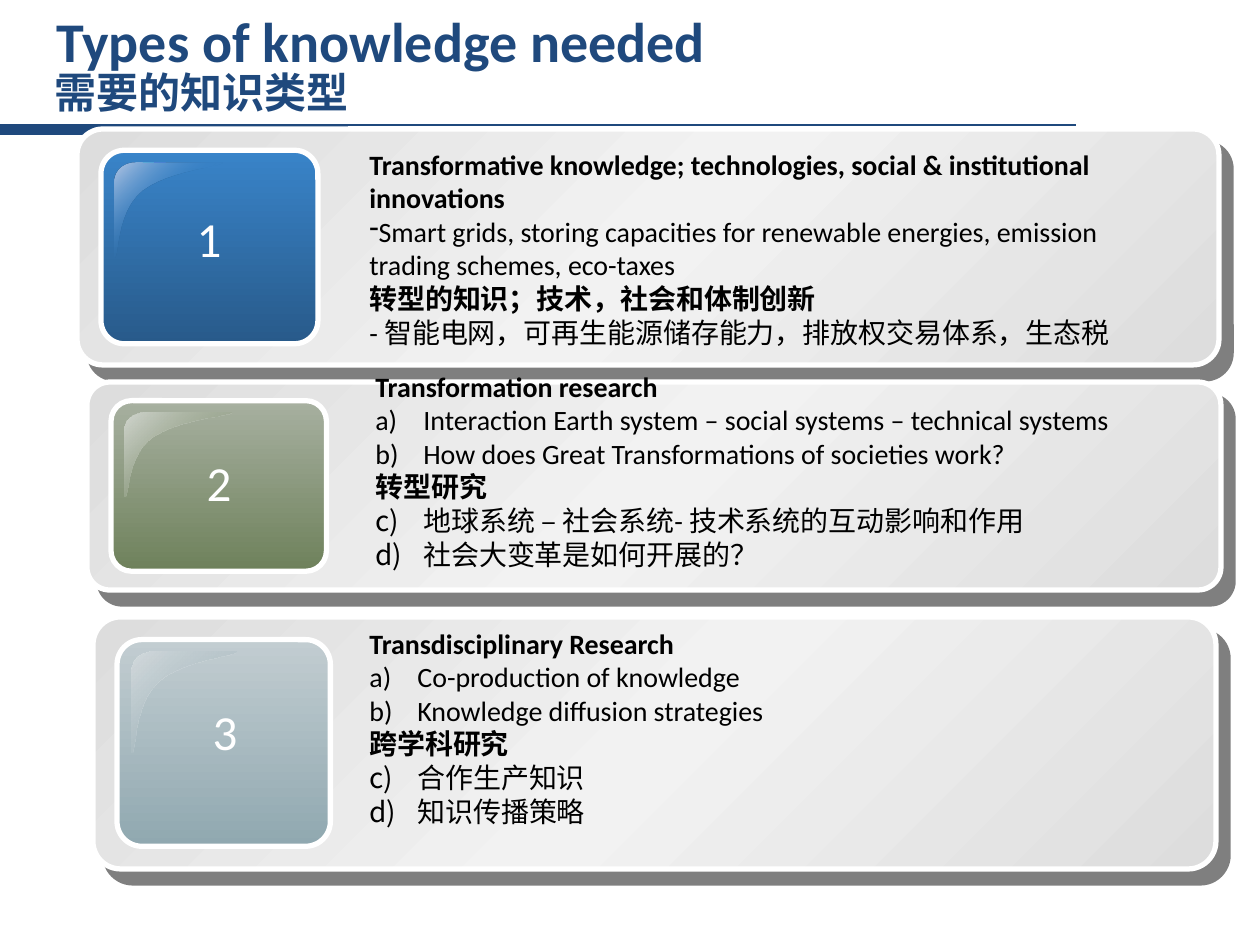
from lxml.etree import SubElement
from pptx import Presentation
from pptx.dml.color import RGBColor
from pptx.enum.shapes import MSO_CONNECTOR, MSO_SHAPE
from pptx.enum.text import MSO_ANCHOR, PP_ALIGN
from pptx.oxml.ns import qn
from pptx.util import Pt

PX = 914400 / 126
FONT = "Calibri"
COLORS = {
    "navy": "1F497D", "white": "FFFFFF", "black": "000000",
    "panel_edge": "DDDDDD", "panel_mid": "F2F2F2",
    "blue_top": "3984C9", "blue_bottom": "285A8A", "blue_gloss": "B8C8E4",
    "green_top": "A7B0A0", "green_bottom": "6E815B", "green_gloss": "D2D6CF",
    "gray_top": "C2CDD1", "gray_bottom": "90A8B0", "gray_gloss": "D3DADD",
}
PANEL_STOPS = [(0, "panel_edge", 100), (50, "panel_mid", 100), (100, "panel_edge", 100)]

# Gloss outline in percent of its box: start point, then Bezier curves
GLOSS_START = (20, 0)
GLOSS_CURVES = [
    [(20, 0), (8, 0), (0, 9), (0, 20)],
    [(0, 98), (5, 100), (1, 51), (26, 29)],
    [(26, 29), (52, 7), (100, 5), (99, 0)],
]

# Each line is (kind, text); kinds: head, plain, dash, letter
CARDS = [
    {"panel": (77, 129, 1142, 236), "text": (357, 141, 839, 251),
     "badge": ("blue_top", "blue_bottom"),
     "gloss": [(0, "blue_gloss", 100), (50, "blue_top", 0), (100, "blue_gloss", 100)],
     "lines": [
         ("head", "Transformative knowledge; technologies, social & institutional innovations"),
         ("dash", "Smart grids, storing capacities for renewable energies, "
                  "emission trading schemes, eco-taxes"),
         ("head", "转型的知识；技术，社会和体制创新"),
         ("plain", "- 智能电网，可再生能源储存能力，排放权交易体系，生态税")]},
    {"panel": (87, 382, 1134, 208), "text": (363, 363, 833, 217),
     "badge": ("green_top", "green_bottom"),
     "gloss": [(0, "green_gloss", 100), (100, "green_bottom", 0)],
     "lines": [
         ("head", "Transformation research"),
         ("letter", "Interaction Earth system – social systems – technical systems"),
         ("letter", "How does Great Transformations of societies work?"),
         ("head", "转型研究"),
         ("letter", "地球系统 – 社会系统- 技术系统的互动影响和作用"),
         ("letter", "社会大变革是如何开展的？")]},
    {"panel": (93, 617, 1123, 252), "text": (357, 620, 825, 217),
     "badge": ("gray_top", "gray_bottom"),
     "gloss": [(0, "gray_gloss", 100), (100, "gray_bottom", 0)],
     "lines": [
         ("head", "Transdisciplinary Research"),
         ("letter", "Co-production of knowledge"),
         ("letter", "Knowledge diffusion strategies"),
         ("head", "跨学科研究"),
         ("letter", "合作生产知识"),
         ("letter", "知识传播策略")]},
]


def px(value):
    return round(value * PX)


def rgb(name):
    return RGBColor.from_string(COLORS[name])


def set_gradient(shape, stops, angle):
    """Fill with (percent, colour, opacity) stops at a clockwise angle."""
    shape.fill.gradient()
    shape.fill.gradient_angle = 360 - angle
    stop_list = shape.element.spPr.find(f".//{qn('a:gsLst')}")
    stop_list.clear()
    for position, color, opacity in stops:
        stop = SubElement(stop_list, qn("a:gs"), pos=str(position * 1000))
        clr = SubElement(stop, qn("a:srgbClr"), val=COLORS[color])
        if opacity < 100:
            SubElement(clr, qn("a:alpha"), val=str(opacity * 1000))


def add_hard_shadow(shape):
    effects = shape.element.spPr.find(qn("a:effectLst"))
    shadow = SubElement(effects, qn("a:outerShdw"), blurRad="0", dist=str(Pt(10.6)),
                        dir=str(49 * 60000), algn="ctr", rotWithShape="0")
    clr = SubElement(shadow, qn("a:srgbClr"), val=COLORS["black"])
    SubElement(clr, qn("a:alpha"), val="50000")


def add_rounded(slide, box, radius, stops, angle):
    rounded = slide.shapes.add_shape(MSO_SHAPE.ROUNDED_RECTANGLE, *map(px, box))
    rounded.adjustments[0] = radius
    set_gradient(rounded, stops, angle)
    rounded.line.color.rgb = rgb("white")
    rounded.line.width = Pt(3)
    rounded.shadow.inherit = False
    return rounded


def bezier(curve, steps=12):
    weights = [((1 - t) ** 3, 3 * t * (1 - t) ** 2, 3 * t * t * (1 - t), t ** 3)
               for t in (i / steps for i in range(steps + 1))]
    return [tuple(sum(w * p[axis] for w, p in zip(row, curve)) for axis in (0, 1))
            for row in weights]


def add_gloss(slide, box, stops):
    left, top, width, height = box

    def place(point):
        return px(left + point[0] * width / 100), px(top + point[1] * height / 100)

    outline = [place(point) for curve in GLOSS_CURVES for point in bezier(curve)]
    builder = slide.shapes.build_freeform(*place(GLOSS_START), scale=1.0)
    builder.add_line_segments(outline, close=True)
    gloss = builder.convert_to_shape()
    set_gradient(gloss, stops, 45)
    gloss.line.fill.background()
    gloss.shadow.inherit = False


def style(paragraph, size, color, bold=False):
    paragraph.font.name = FONT
    paragraph.font.size = Pt(size)
    paragraph.font.bold = bold
    paragraph.font.color.rgb = rgb(color)


def add_label(slide, box, text, size, color, bold=False):
    frame = slide.shapes.add_textbox(*map(px, box)).text_frame
    frame.word_wrap = True
    paragraph = frame.paragraphs[0]
    paragraph.text = text
    style(paragraph, size, color, bold)
    return frame


def add_bullet(paragraph, kind):
    properties = paragraph._p.get_or_add_pPr()
    if kind == "letter":
        properties.set("marL", str(px(48)))
        properties.set("indent", str(px(-48)))
        SubElement(properties, qn("a:buFont"), typeface="+mj-lt")
        SubElement(properties, qn("a:buAutoNum"), type="alphaLcParenR")
    elif kind == "dash":
        SubElement(properties, qn("a:buChar"), char="-")


def add_body(slide, box, lines):
    frame = slide.shapes.add_textbox(*map(px, box)).text_frame
    frame.word_wrap = True
    for index, (kind, text) in enumerate(lines):
        paragraph = frame.add_paragraph() if index else frame.paragraphs[0]
        paragraph.text = text
        add_bullet(paragraph, kind)
        style(paragraph, 16, "black", kind == "head")


def add_card(slide, number, card):
    # Panel
    left, top, width, height = card["panel"]
    panel = add_rounded(slide, card["panel"], 0.11, PANEL_STOPS, 45)
    add_hard_shadow(panel)

    # Badge, placed in proportion to the panel
    x, y, w, h = left + 24, top + 0.09 * height, 0.19 * width, 0.82 * height
    upper, lower = card["badge"]
    add_rounded(slide, (x, y, w, h), 0.12, [(0, upper, 100), (100, lower, 100)], 90)
    add_gloss(slide, (x + 14, y + 12, w / 2, h / 2), card["gloss"])
    numeral = add_label(slide, (x + 72, y + 0.27 * h, 72, h / 2), str(number), 28, "white")
    numeral.word_wrap = False
    numeral.paragraphs[0].alignment = PP_ALIGN.CENTER

    # Text
    add_body(slide, card["text"], card["lines"])


def add_header(slide):
    rule = slide.shapes.add_connector(MSO_CONNECTOR.STRAIGHT, 0, px(125), px(1076), px(125))
    rule.line.color.rgb = rgb("navy")
    rule.line.width = Pt(1.5)
    SubElement(rule.element.spPr, qn("a:effectLst"))

    bar = slide.shapes.add_shape(MSO_SHAPE.RECTANGLE, 0, px(125), px(348), px(10))
    bar.fill.solid()
    bar.fill.fore_color.rgb = rgb("navy")
    bar.line.fill.background()
    bar.shadow.inherit = False

    for box, text, size in [((44, 11, 704, 58), "Types of knowledge needed", 32),
                            ((42, 68, 688, 47), "需要的知识类型", 24)]:
        title = add_label(slide, box, text, size, "navy", True)
        title.vertical_anchor = MSO_ANCHOR.MIDDLE


def main():
    deck = Presentation()
    deck.slide_width, deck.slide_height = px(1260), px(945)
    slide = deck.slides.add_slide(deck.slide_layouts[6])
    add_header(slide)
    for number, card in enumerate(CARDS, start=1):
        add_card(slide, number, card)
    deck.save("out.pptx")


if __name__ == "__main__":
    main()
